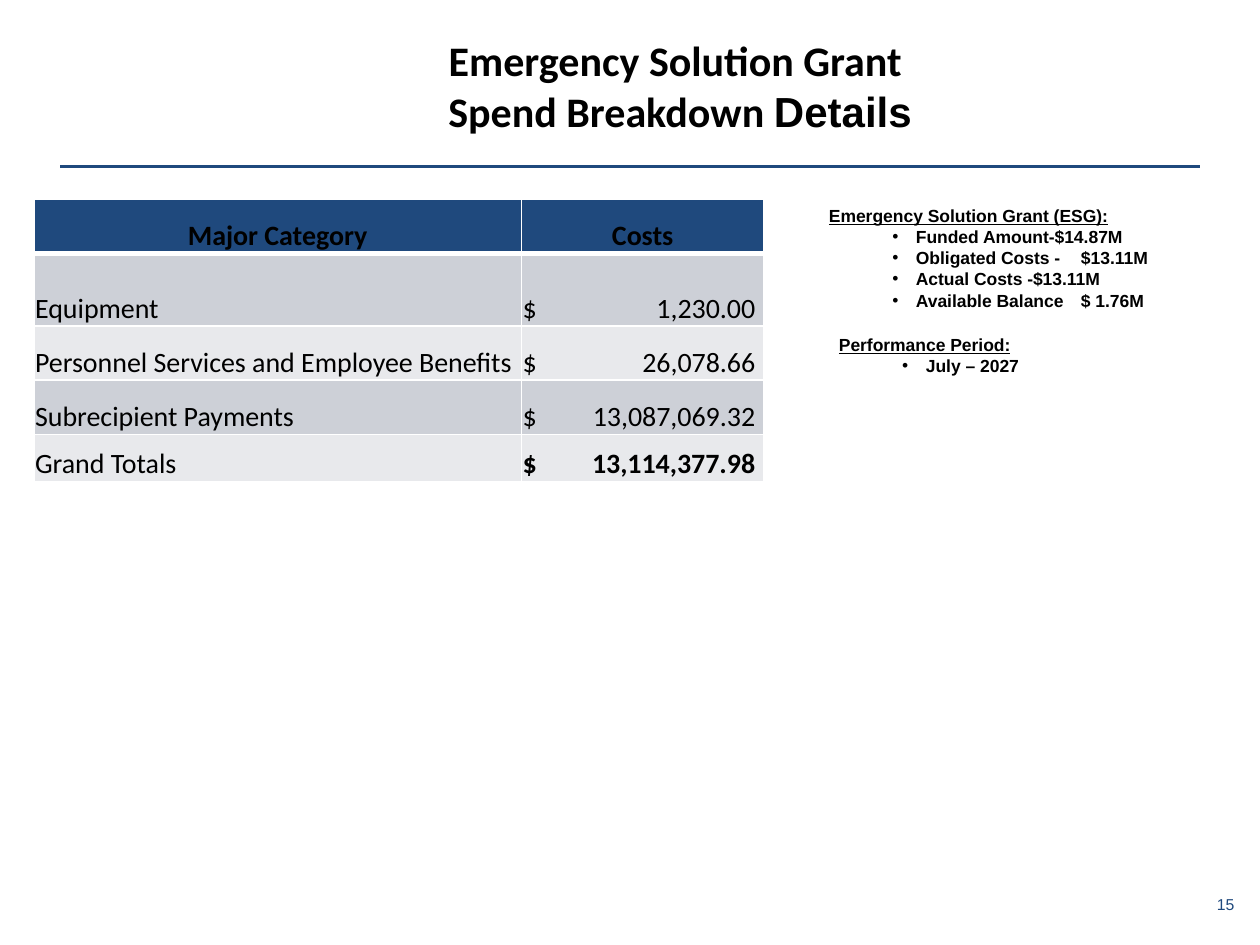
from lxml import etree
from pptx import Presentation
from pptx.dml.color import RGBColor
from pptx.enum.shapes import MSO_CONNECTOR
from pptx.enum.text import MSO_ANCHOR, PP_ALIGN
from pptx.oxml.ns import qn
from pptx.util import Pt

LEFT, CENTER = PP_ALIGN.LEFT, PP_ALIGN.CENTER
MIDDLE, BOTTOM = MSO_ANCHOR.MIDDLE, MSO_ANCHOR.BOTTOM
STRAIGHT = MSO_CONNECTOR.STRAIGHT
NAVY, BLACK, WHITE = "1F497D", "000000", "FFFFFF"
BANDS = ("CDD0D7", "E8E9EC")


def rgb(value):
    return RGBColor.from_string(value)


def child(parent, tag, **attrs):
    return etree.SubElement(parent, qn(tag), attrs)


def add_tab(p, pos):
    tabs = child(p._p.get_or_add_pPr(), "a:tabLst")
    child(tabs, "a:tab", pos=str(Pt(pos)), algn="r")


def add_bullet(p, indent, hang):
    pPr = p._p.get_or_add_pPr()
    pPr.set("marL", str(Pt(indent)))
    pPr.set("indent", str(-Pt(hang)))
    child(pPr, "a:buFont", typeface="Arial")
    child(pPr, "a:buChar", char="•")


def style(run, size, font="Arial", color=BLACK, bold=False, underline=False):
    f = run.font
    f.size, f.name, f.bold, f.underline = Pt(size), font, bold, underline
    f.color.rgb = rgb(color)


class Deck:
    def __init__(self, slide):
        self.s = slide

    def line(self, x1, y1, x2, y2, color, width):
        ln = self.s.shapes.add_connector(STRAIGHT, Pt(x1), Pt(y1), Pt(x2), Pt(y2))
        ln.line.color.rgb = rgb(color)
        ln.line.width = Pt(width)
        child(ln._element.spPr, "a:effectLst")

    def box(self, x, y, w, h, wrap=True):
        sp = self.s.shapes.add_textbox(Pt(x), Pt(y), Pt(w), Pt(h))
        sp.text_frame.word_wrap = wrap
        return sp.text_frame

    def title(self, x, y, w, h, parts):
        tf = self.box(x, y, w, h)
        tf.vertical_anchor = MIDDLE
        tf.margin_left, tf.margin_bottom = Pt(10.8), Pt(33)
        p = tf.paragraphs[0]
        p.text = parts[0][0]
        p.add_run().text = parts[1][0]
        p.alignment = CENTER
        fonts = [parts[0][1]] * (len(p.runs) - 1) + [parts[1][1]]
        for r, font in zip(p.runs, fonts):
            style(r, 24, font, bold=True)

    def number(self, x, y, w, h, text):
        tf = self.box(x, y, w, h, wrap=False)
        tf.margin_left, tf.margin_right = Pt(6.4), 0
        tf.text = text
        style(tf.paragraphs[0].runs[0], 9, color=NAVY)

    def bullets(self, x, y, w, h, heading, items):
        tf = self.box(x, y, w, h)
        tf.text = heading
        style(tf.paragraphs[0].runs[0], 10, bold=True, underline=True)
        for item in items:
            p = tf.add_paragraph()
            p.text = item
            p.level = 1
            add_bullet(p, 49.7, 13.5)
            if "\t" in item:
                add_tab(p, 131)  # counted from the indent
            for r in p.runs:
                style(r, 10, bold=True)

    def borders(self, cell, **widths):
        tcPr = cell._tc.get_or_add_tcPr()
        for i, (side, width) in enumerate(widths.items()):
            ln = etree.Element(qn("a:" + side), w=str(Pt(width)))
            fill = child(ln, "a:solidFill")
            child(fill, "a:srgbClr", val=WHITE)
            tcPr.insert(i, ln)

    def table(self, x, y, cols, heights, rows):
        shape = self.s.shapes.add_table(len(rows), len(cols), Pt(x), Pt(y),
                                        Pt(sum(cols)), Pt(sum(heights)))
        tbl = shape.table
        for col, w in zip(tbl.columns, cols):
            col.width = Pt(w)
        for i, (h, row) in enumerate(zip(heights, rows)):
            tbl.rows[i].height = Pt(h)
            for j, text in enumerate(row):
                cell = tbl.cell(i, j)
                head, total = i == 0, i == len(rows) - 1
                cell.fill.solid()
                cell.fill.fore_color.rgb = rgb(NAVY if head else BANDS[(i - 1) % 2])
                cell.vertical_anchor = BOTTOM
                cell.margin_left = cell.margin_right = cell.margin_top = Pt(0.7)
                cell.margin_bottom = 0
                p = cell.text_frame.paragraphs[0]
                p.text = text
                p.alignment = CENTER if head else LEFT
                if "\t" in text:
                    add_tab(p, 133)
                for r in p.runs:
                    style(r, 16, "Calibri", bold=head or (total and j == 1))
                self.borders(cell, lnL=1, lnR=1, lnT=3 if i == 1 else 1,
                             lnB=3 if head else 1)


def main():
    prs = Presentation()
    prs.slide_width, prs.slide_height = Pt(720), Pt(540)
    deck = Deck(prs.slides.add_slide(prs.slide_layouts[6]))

    # Rule and slide number
    deck.line(34.5, 95, 686, 95, NAVY, 1.5)
    deck.number(689, 507.6, 23.8, 17.3, "15")

    # Title
    deck.title(95.8, 25.9, 581.8, 74.9,
               [("Emergency Solution Grant \vSpend Breakdown ", "Calibri"),
                ("Details", "Arial")])

    # Grant summary
    deck.bullets(466.6, 113.8, 228.2, 92.2, "Emergency Solution Grant (ESG):",
                 ["Funded Amount-\t$14.87M", "Obligated Costs -\t$13.11M",
                  "Actual Costs -\t$13.11M", "Available Balance\t$ 1.76M"])

    # Cost table
    deck.table(19.4, 113.8, [278.6, 138.6], [31, 41.4, 31, 31, 27],
               [("Major Category", "Costs"),
                ("Equipment", "$\t1,230.00"),
                ("Personnel Services and Employee Benefits", "$\t26,078.66"),
                ("Subrecipient Payments", "$\t13,087,069.32"),
                ("Grand Totals", "$\t13,114,377.98")])

    # Performance period
    deck.bullets(472.3, 187.2, 228.2, 55.4, "Performance Period:", ["July – 2027"])

    prs.save("out.pptx")


if __name__ == "__main__":
    main()
